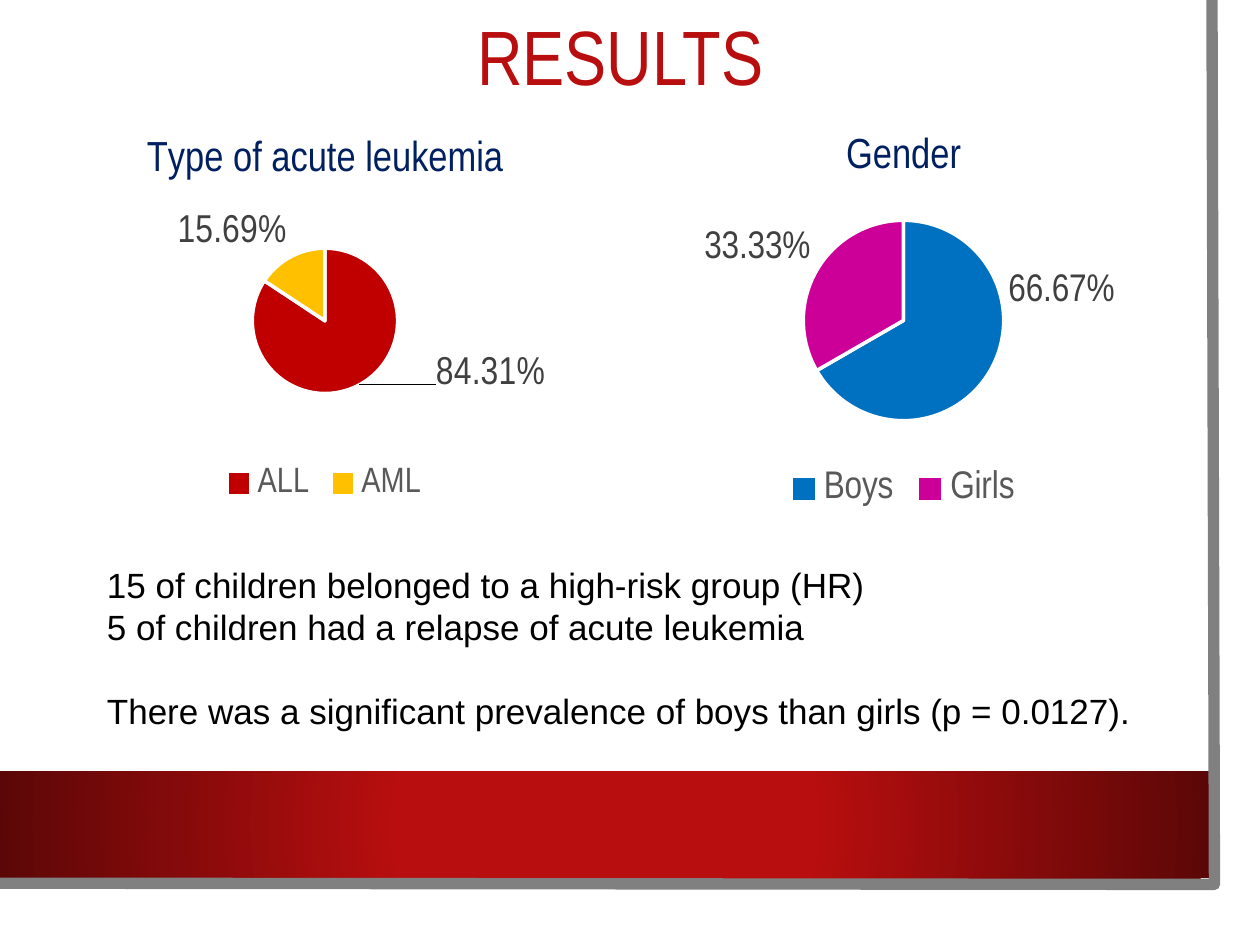
from lxml import etree
from pptx import Presentation
from pptx.chart.data import CategoryChartData
from pptx.dml.color import RGBColor
from pptx.enum.chart import XL_CHART_TYPE, XL_LABEL_POSITION, XL_LEGEND_POSITION
from pptx.enum.shapes import MSO_SHAPE
from pptx.enum.text import MSO_ANCHOR, PP_ALIGN
from pptx.oxml import parse_xml
from pptx.oxml.ns import nsdecls, qn
from pptx.util import Pt

PIE = XL_CHART_TYPE.PIE
OUTSIDE = XL_LABEL_POSITION.OUTSIDE_END
BOTTOM = XL_LEGEND_POSITION.BOTTOM
LEFT, CENTER = PP_ALIGN.LEFT, PP_ALIGN.CENTER
TOP, MIDDLE = MSO_ANCHOR.TOP, MSO_ANCHOR.MIDDLE

RED = RGBColor(0xB8, 0x0E, 0x0F)
DARK = RGBColor(0x5C, 0x07, 0x07)
GRAY = RGBColor(0x80, 0x80, 0x80)
NAVY = RGBColor(0x00, 0x20, 0x60)
LABEL = RGBColor(0x40, 0x40, 0x40)
LEGEND = RGBColor(0x59, 0x59, 0x59)
BLACK = RGBColor(0, 0, 0)
WHITE = RGBColor(0xFF, 0xFF, 0xFF)
NARROW = "Arial Narrow"

# Each line with the space before it
NOTES = [
    ("15 of children belonged to a high-risk group (HR)", 0),
    ("5 of children had a relapse of acute leukemia", 0),
    ("There was a significant prevalence of boys than girls (p = 0.0127).", 24),
]
# plot: left, top, width, height as shares of the chart; shift: move of first label
CHARTS = [
    dict(title="Type of acute leukemia", box=(11.5, 65.5, 348.5, 224.6),
         slices=[("ALL", 0.8431, RGBColor(0xC0, 0, 0)),
                 ("AML", 0.1569, RGBColor(0xFF, 0xC0, 0))],
         plot=(0.38, 0.34, 0.24, 0.37), shift=(0.12, -0.09),
         label=22.2, legend=20.1, leader=True),
    dict(title="Gender", box=(347.8, 63.4, 337, 230.4),
         slices=[("Boys", 0.6667, RGBColor(0, 0x70, 0xC0)),
                 ("Girls", 0.3333, RGBColor(0xCC, 0, 0x99))],
         plot=(0.33, 0.27, 0.34, 0.5), shift=(0.02, -0.25),
         label=22, legend=22, leader=False),
]


def style(font, size, color, name=NARROW):
    font.size, font.name, font.bold = Pt(size), name, False
    font.color.rgb = color


def add_text(slide, lines, box, size, color, name, align=LEFT, anchor=TOP, spacing=None):
    frame = slide.shapes.add_textbox(*map(Pt, box)).text_frame
    frame.word_wrap = True
    frame.vertical_anchor = anchor
    for i, (text, gap) in enumerate(lines):
        para = frame.paragraphs[0] if i == 0 else frame.add_paragraph()
        para.alignment = align
        if spacing:
            para.line_spacing = spacing
        if gap:
            para.space_before = Pt(gap)
        run = para.add_run()
        run.text = text
        style(run.font, size, color, name)


def layout(**parts):
    """Manual chart layout, its parts in schema order."""
    tags = "".join(f'<c:{key} val="{val}"/>' for key, val in parts.items())
    return parse_xml(f'<c:layout {nsdecls("c")}><c:manualLayout>{tags}'
                     "</c:manualLayout></c:layout>")


def add_pie(slide, title, box, slices, plot, shift, label, legend, leader):
    data = CategoryChartData(number_format="0.00%")
    data.categories = [name for name, _, _ in slices]
    data.add_series(title, [value for _, value, _ in slices])
    chart = slide.shapes.add_chart(PIE, *map(Pt, box), data).chart
    style(chart.font, 10, BLACK)

    chart.has_title = True
    chart.chart_title.include_in_layout = False
    run = chart.chart_title.text_frame.paragraphs[0].add_run()
    run.text = title
    style(run.font, 24, NAVY)

    chart.has_legend = True
    chart.legend.position = BOTTOM
    chart.legend.include_in_layout = False
    style(chart.legend.font, legend, LEGEND)

    pie = chart.plots[0]
    pie.vary_by_categories = True
    series = pie.series[0]
    for i, (_, _, color) in enumerate(slices):
        form = series.points[i].format
        form.fill.solid()
        form.fill.fore_color.rgb = color
        form.line.color.rgb = WHITE
        form.line.width = Pt(2)

    labels = series.data_labels
    labels.number_format, labels.number_format_is_linked = "0.00%", False
    labels.show_value = True
    labels.show_percentage = False
    labels.position = OUTSIDE
    style(labels.font, label, LABEL)
    first = series.points[0].data_label
    first.position = OUTSIDE
    style(first.font, label, LABEL)

    root = chart.plots[0].series[0].data_labels._element
    lead = root.find(qn("c:showLeaderLines"))
    if lead is None:
        lead = etree.SubElement(root, qn("c:showLeaderLines"))
    lead.set("val", str(int(leader)))
    spot = root.find(qn("c:dLbl"))
    spot.insert(1, layout(x=shift[0], y=shift[1]))
    for tag in ("c:showPercent", "c:showCatName", "c:showSerName", "c:showLegendKey"):
        spot.find(qn(tag)).set("val", "0")

    area = pie._element.getparent()
    for old in area.findall(qn("c:layout")):
        area.remove(old)
    x, y, w, h = plot
    area.insert(0, layout(layoutTarget="inner", xMode="edge", yMode="edge",
                          x=x, y=y, w=w, h=h))


def add_frame(slide):
    """Red band and the gray edge around the page."""
    band = slide.shapes.add_shape(MSO_SHAPE.RECTANGLE, *map(Pt, (0, 440.6, 691.2, 61.2)))
    band.shadow.inherit = False
    band.line.fill.background()
    band.fill.gradient()
    for stop, place, color in zip(band.fill.gradient_stops, (0.34, 1), (RED, DARK)):
        stop.position = place
        stop.color.rgb = color
    grad = band._element.spPr.find(qn("a:gradFill"))
    grad.replace(grad.find(qn("a:lin")), parse_xml(
        f'<a:path {nsdecls("a")} path="circle">'
        '<a:fillToRect l="50000" t="50000" r="50000" b="50000"/></a:path>'))

    pen = slide.shapes.build_freeform(Pt(692.6), 0)
    pen.add_line_segments([(Pt(694), Pt(505.4)), (Pt(-1.4), Pt(504.7))], close=False)
    edge = pen.convert_to_shape()
    edge.shadow.inherit = False
    edge.fill.background()
    edge.line.color.rgb = GRAY
    edge.line.width = Pt(6.5)


def main():
    deck = Presentation()
    deck.slide_width, deck.slide_height = Pt(720), Pt(540)
    slide = deck.slides.add_slide(deck.slide_layouts[6])
    add_frame(slide)
    add_text(slide, [("RESULTS", 0)], (47.5, 2.9, 614.2, 63.4), 44, RED, NARROW,
             align=CENTER, anchor=MIDDLE, spacing=0.9)
    for spec in CHARTS:
        add_pie(slide, **spec)
    add_text(slide, NOTES, (54, 318.2, 601.2, 152.6), 20, BLACK, "Arial")
    deck.save("out.pptx")


if __name__ == "__main__":
    main()
